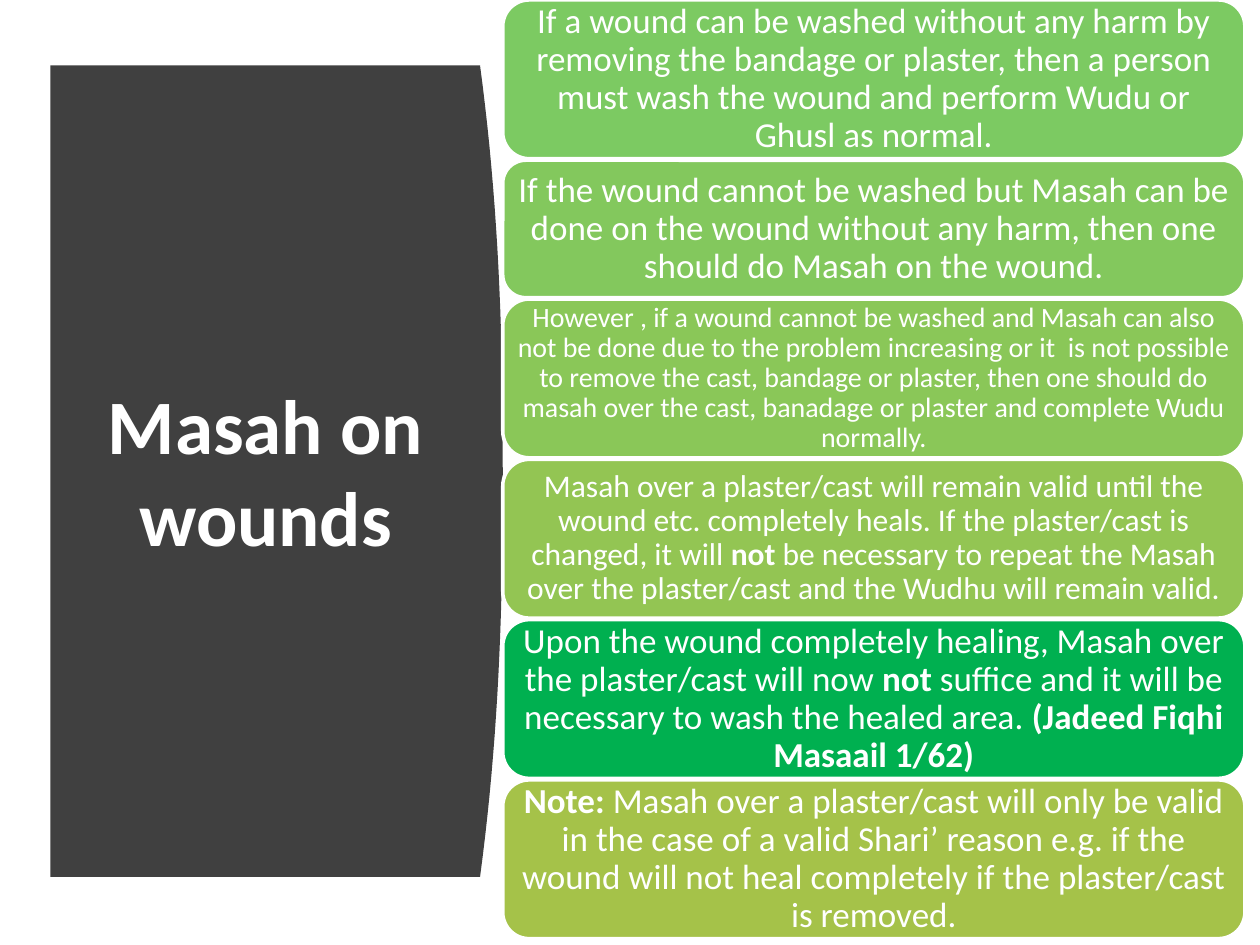
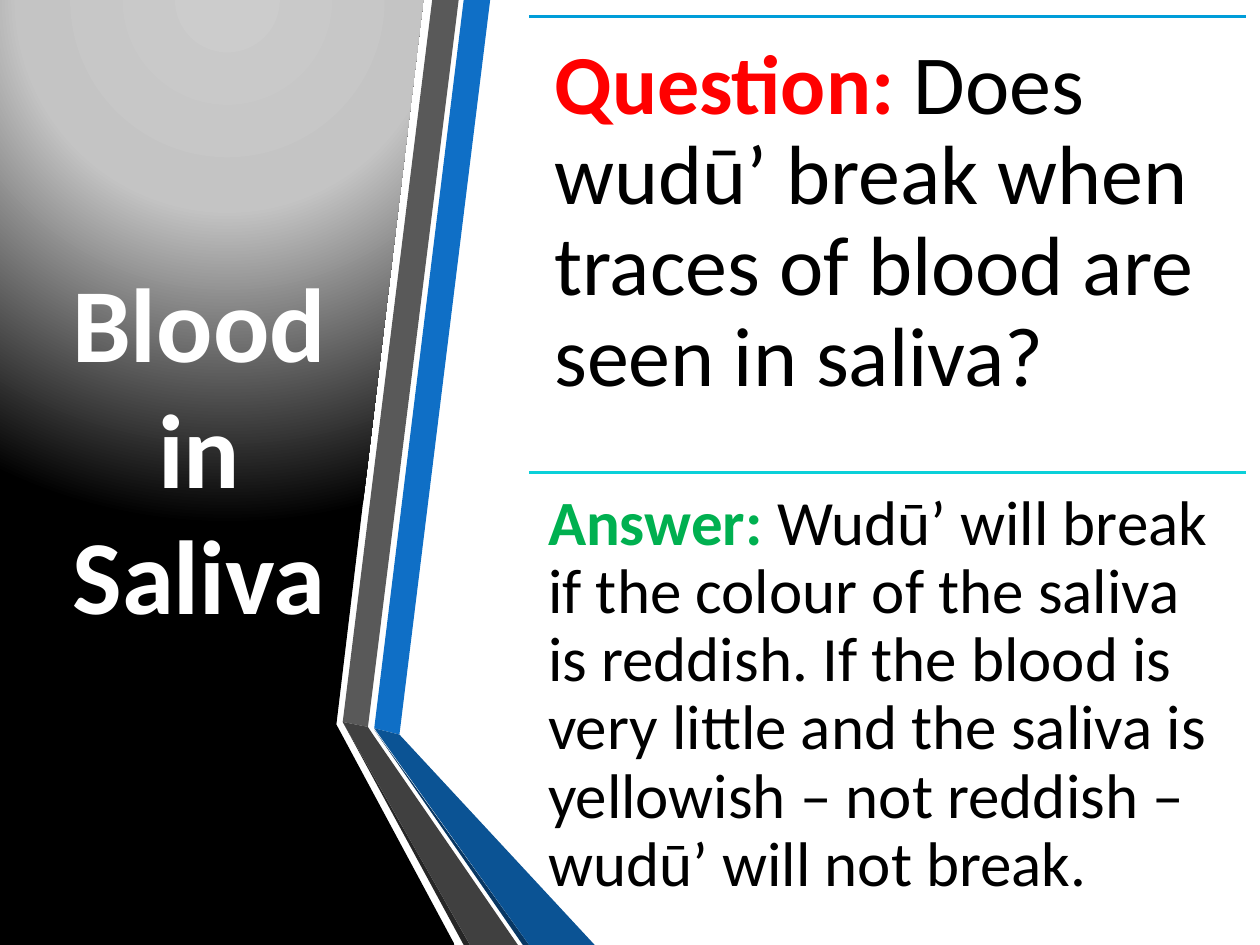
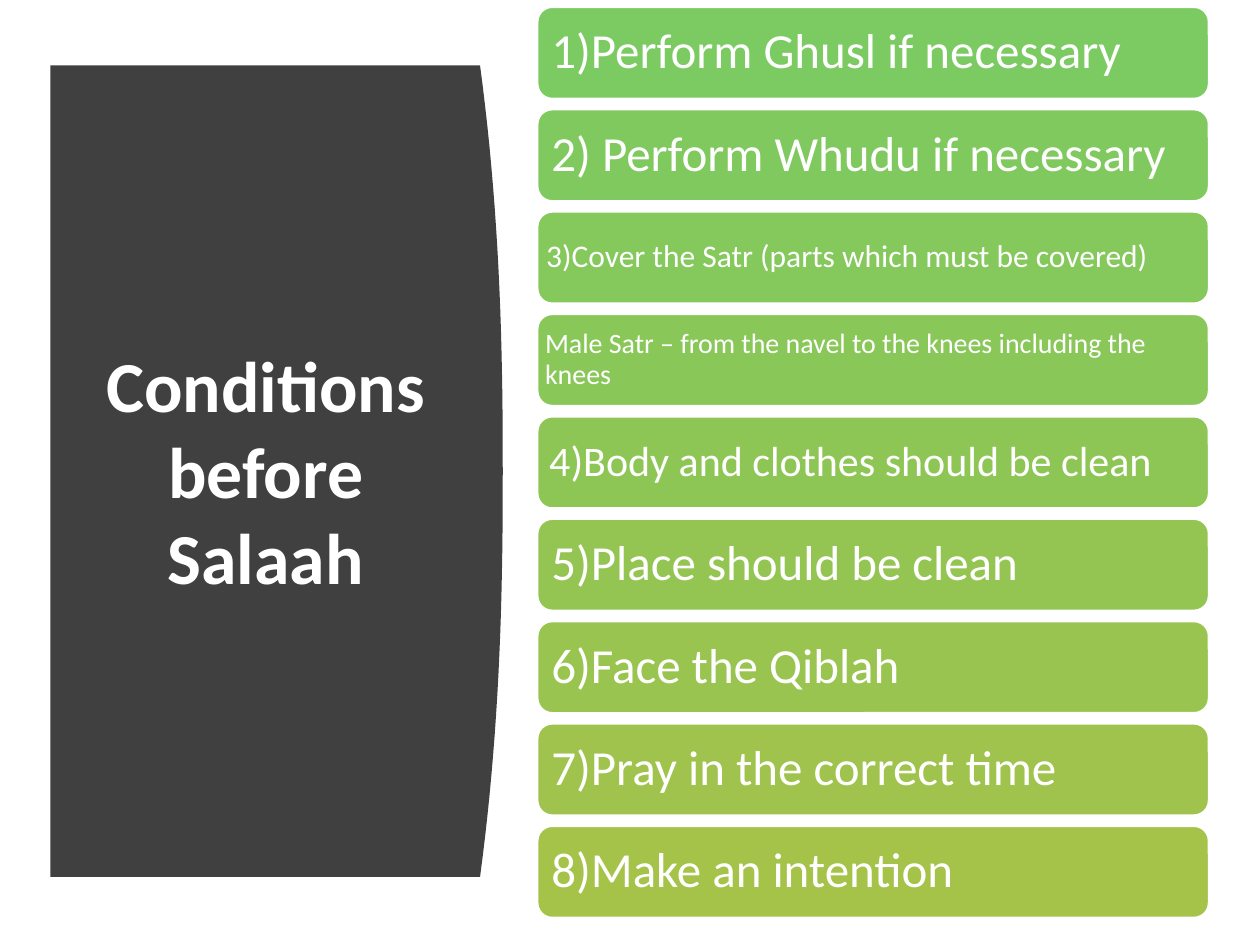
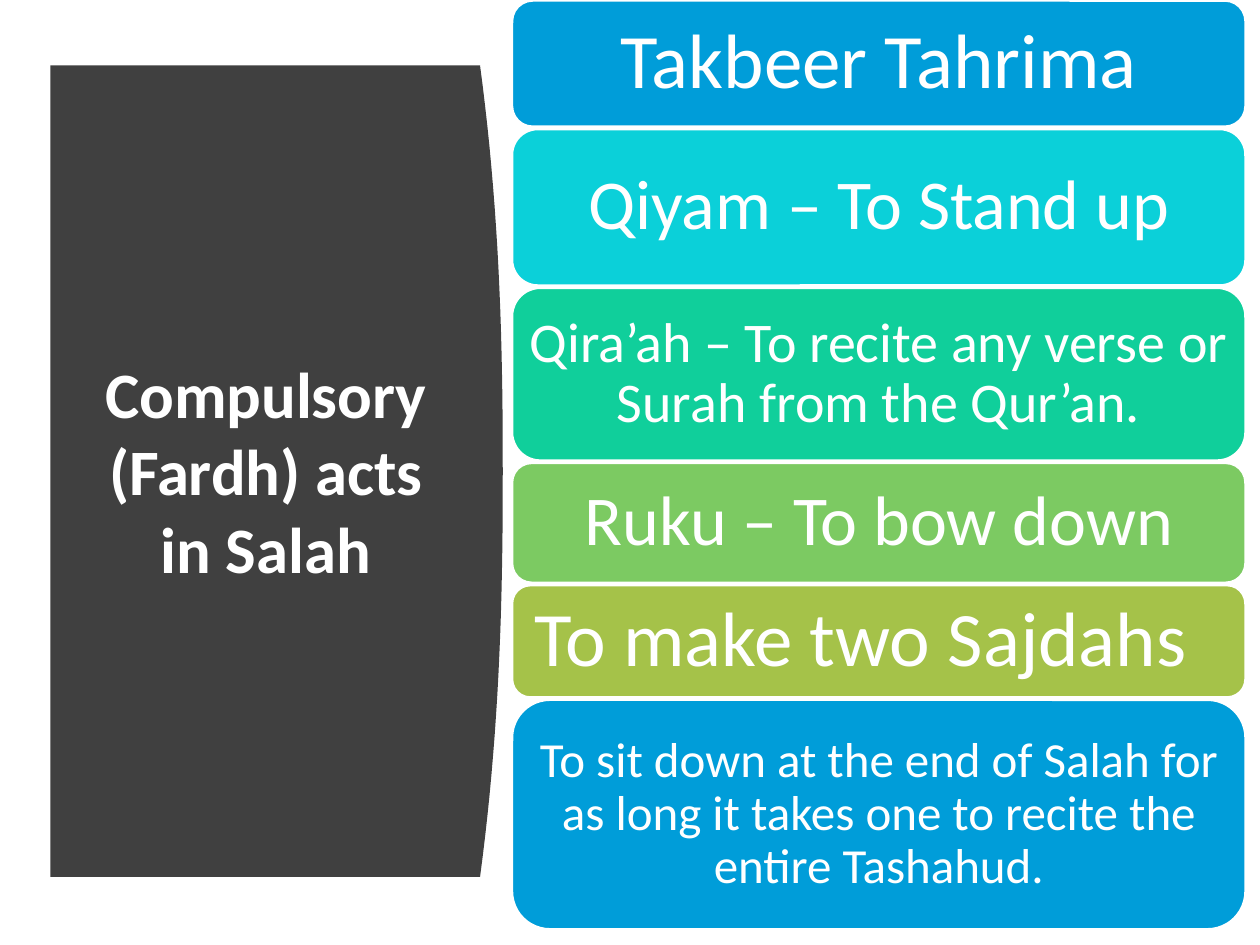
"""Builds four lesson slides on wounds, saliva and the conditions and acts of Salah."""
from dataclasses import dataclass

from lxml import etree
from pptx import Presentation
from pptx import util as u
from pptx.dml.color import RGBColor
from pptx.enum import shapes, text
from pptx.oxml import parse_xml
from pptx.oxml.ns import nsdecls, qn


@dataclass(frozen=True)
class Theme:
    font: str = "Calibri"
    white: str = "FFFFFF"
    black: str = "000000"
    panel: str = "404040"
    red: str = "FF0000"
    green: str = "00B050"
    blue: str = "009DD9"
    cyan: str = "0BD0D9"
    teal: str = "10CF9B"
    leaf: str = "7CCA62"
    olive: str = "A5C249"
    leaf_steps: tuple = ("80C95F", "85C85C", "89C759", "8EC656", "94C552", "99C44F", "9FC34C")
    wound_steps: tuple = ("83C85D", "8AC758", "93C553")
    glow: tuple = ((0, "CCCCCC"), (40, "C4C4C4"), (100, "000000"))
    line: float = 2
    spacing: float = 0.9
    note: int = 16
    small: int = 18
    body: int = 20
    medium: int = 24
    item: int = 28
    large: int = 32
    answer: int = 36
    act: int = 40
    display: int = 44
    question: int = 48
    cover: int = 60
    title_long: int = 37
    title_mid: int = 41


T = Theme()
CENTER, LEFT = text.PP_ALIGN.CENTER, text.PP_ALIGN.LEFT
MIDDLE, TOP = text.MSO_ANCHOR.MIDDLE, text.MSO_ANCHOR.TOP

WOUNDS = [
    ("If a wound can be washed without any harm by removing the bandage or plaster, then a person "
     "must wash the wound and perform Wudu or Ghusl as normal.", T.body, 1.26, T.leaf),
    ("If the wound cannot be washed but Masah can be done on the wound without any harm, then one "
     "should do Masah on the wound.", T.body, 1.09, T.wound_steps[0]),
    ("However , if a wound cannot be washed and Masah can also not be done due to the problem "
     "increasing or it  is not possible to remove the cast, bandage or plaster, then one should do "
     "masah over the cast, banadage or plaster and complete Wudu normally.",
     T.note, 1.26, T.wound_steps[1]),
    ("Masah over a plaster/cast will remain valid until the wound etc. completely heals. If the "
     "plaster/cast is changed, it will **not** be necessary to repeat the Masah over the "
     "plaster/cast and the Wudhu will remain valid.", T.small, 1.26, T.wound_steps[2]),
    ("Upon the wound completely healing, Masah over the plaster/cast will now **not** suffice and "
     "it will be necessary to wash the healed area. **(Jadeed Fiqhi Masaail 1/62)**",
     T.body, 1.26, T.green),
    ("**Note: **Masah over a plaster/cast will only be valid in the case of a valid Shari’ reason "
     "e.g. if the wound will not heal completely if the plaster/cast is removed.",
     T.body, 1.26, T.olive),
]

CONDITIONS = [
    ("1)Perform Ghusl if necessary", T.item),
    ("2) Perform Whudu if necessary", T.item),
    ("3)Cover the Satr (parts which must be covered)", T.small),
    ("Male Satr – from the navel to the knees including the knees", T.note),
    ("4)Body and clothes should be clean", T.medium),
    ("5)Place should be clean", T.item),
    ("6)Face the Qiblah", T.item),
    ("7)Pray in the correct time", T.item),
    ("8)Make an intention", T.item),
]
CONDITION_CARDS = [(words, size, 0.74, fill) for (words, size), fill
                   in zip(CONDITIONS, (T.leaf, *T.leaf_steps, T.olive))]

ACTS = [
    ("Takbeer Tahrima", T.display, 1.01, T.blue),
    ("Qiyam – To Stand up", T.act, 1.25, T.cyan),
    ("Qira’ah – To recite any verse or Surah from the Qur’an.", T.large, 1.38, T.teal),
    ("Ruku – To bow down", T.act, 0.96, T.leaf),
    ("To make two Sajdahs", T.display, 0.9, T.olive, LEFT),
    ("To sit down at the end of Salah for as long it takes one to recite the entire Tashahud.",
     T.item, 1.83, T.blue),
]

CARD_SLIDES = {
    "wounds": dict(title="Masah on wounds", size=T.display, cards=WOUNDS,
                   left=3.99, width=5.89, top=0, bottom=7.45, align=CENTER),
    "conditions": dict(title="Conditions before Salaah", size=T.title_mid, cards=CONDITION_CARDS,
                       left=4.26, width=5.34, top=0.05, bottom=7.29, align=LEFT),
    "acts": dict(title="Compulsory (Fardh) acts in Salah", size=T.title_long, cards=ACTS,
                 left=4.06, width=5.83, top=0, bottom=7.38, align=CENTER),
}

SALIVA = [
    ("**Question: **Does wudū’ break when traces of blood are seen in saliva?",
     T.question, T.red, T.blue),
    ("**Answer: **Wudū’ will break if the colour of the saliva is reddish. If the blood is very "
     "little and the saliva is yellowish – not reddish – wudū’ will not break.",
     T.answer, T.green, T.cyan),
]
BACKDROP = [(0, 0), (3.36, 0), (2.67, 5.75), (3.61, 7.5), (0, 7.5)]
RIBBONS = [
    ("0F6FC6", [(2.97, 5.78), (3.17, 5.83), (3.89, 0), (3.68, 0)]),
    ("595959", [(3.64, 0), (3.43, 0), (2.72, 5.73), (2.92, 5.77)]),
    ("262626", [(2.72, 5.73), (3.68, 7.5), (3.73, 7.5)]),
    ("083763", [(2.97, 5.79), (4.15, 7.5), (4.2, 7.5)]),
    ("0B5394", [(2.97, 5.78), (4.2, 7.5), (4.72, 7.5), (3.17, 5.83)]),
    ("404040", [(4.11, 7.5), (2.96, 5.83), (2.92, 5.77), (2.72, 5.73), (3.73, 7.5)]),
]


def rgb(value):
    return RGBColor.from_string(value)


def write(tf, words, *, size, color=T.white, strong=None, bold=False, align=LEFT,
          anchor=MIDDLE, inset=None, spacing=None):
    tf.word_wrap = True
    tf.auto_size = text.MSO_AUTO_SIZE.NONE
    tf.vertical_anchor = anchor
    if inset is not None:
        tf.margin_left = tf.margin_right = tf.margin_top = tf.margin_bottom = u.Inches(inset)
    p = tf.paragraphs[0]
    p.alignment = align
    if spacing:
        p.line_spacing = spacing
    for i, part in enumerate(words.split("**")):
        if part:
            marked = i % 2 == 1
            r = p.add_run()
            r.text = part
            r.font.name, r.font.size = T.font, u.Pt(size)
            r.font.bold = bold or marked
            r.font.color.rgb = rgb(strong if marked and strong else color)


def outline(s, points, fill):
    emu = [(u.Inches(x), u.Inches(y)) for x, y in points]
    builder = s.shapes.build_freeform(*emu[0], scale=1.0)
    builder.add_line_segments(emu[1:], close=True)
    sp = builder.convert_to_shape()
    sp.shadow.inherit = False
    sp.fill.solid()
    sp.fill.fore_color.rgb = rgb(fill)
    sp.line.fill.background()
    return sp


def glow(sp):
    stops = "".join(f'<a:gs pos="{pos * 1000}"><a:srgbClr val="{color}"/></a:gs>'
                    for pos, color in T.glow)
    grad = parse_xml(f'<a:gradFill {nsdecls("a")} rotWithShape="1"><a:gsLst>{stops}</a:gsLst>'
                     '<a:path path="circle"><a:fillToRect l="50000" t="-80000" r="50000" '
                     'b="180000"/></a:path></a:gradFill>')
    props = sp.element.spPr
    props.replace(props.find(qn("a:solidFill")), grad)


def add_title(s, words, size, box):
    sp = s.shapes.title
    sp.element.getparent().append(sp.element)
    sp.left, sp.top, sp.width, sp.height = map(u.Inches, box)
    write(sp.text_frame, words, size=size, bold=True, align=CENTER)


def add_panel(s, left=0.4, top=0.52, bottom=6.96, edge=3.81, bulge=0.18, steps=40):
    middle, half = (top + bottom) / 2, (bottom - top) / 2
    ys = [top + (bottom - top) * i / steps for i in range(steps + 1)]
    curve = [(edge + bulge * (1 - min(1, abs(y - middle) / half) ** 2.4), y) for y in ys]
    outline(s, [(left, top), *curve, (left, bottom)], T.panel)


def add_card(s, words, size, box, fill, align):
    sp = s.shapes.add_shape(shapes.MSO_SHAPE.ROUNDED_RECTANGLE, *map(u.Inches, box))
    sp.shadow.inherit = False
    sp.fill.solid()
    sp.fill.fore_color.rgb = rgb(fill)
    sp.line.color.rgb = rgb(T.white)
    sp.line.width = u.Pt(T.line)
    corner = box[3] * 0.1667 * 0.293
    write(sp.text_frame, words, size=size, align=align, inset=size / 240 - corner,
          spacing=T.spacing)


def card_slide(s, title, size, cards, left, width, top, bottom, align):
    add_panel(s)
    add_title(s, title, size, (0.71, 1.11, 2.8, 5.24))
    gap = (bottom - top - sum(card[2] for card in cards)) / (len(cards) - 1)
    for words, points, height, fill, *own in cards:
        add_card(s, words, points, (left, top, width, height), fill, own[0] if own else align)
        top += height + gap


def add_rule(s, left, top, width, color):
    ends = map(u.Inches, (left, top, left + width, top))
    line = s.shapes.add_connector(shapes.MSO_CONNECTOR.STRAIGHT, *ends)
    line.line.color.rgb = rgb(color)
    line.line.width = u.Pt(T.line)
    etree.SubElement(line.element.spPr, qn("a:effectLst"))


def saliva_slide(s, left=4.2, top=0.13, width=5.69, height=3.62):
    glow(outline(s, BACKDROP, T.black))
    for fill, points in RIBBONS:
        outline(s, points, fill)
    add_title(s, "Blood in Saliva", T.cover, (0.44, 0.75, 2.28, 5.58))
    for i, (words, size, strong, color) in enumerate(SALIVA):
        y = top + i * height
        add_rule(s, left, y, width, color)
        box = s.shapes.add_textbox(*map(u.Inches, (left, y, width, height)))
        write(box.text_frame, words, size=size, color=T.black, strong=strong, anchor=TOP,
              inset=size / 240, spacing=T.spacing)


def main():
    prs = Presentation()
    prs.slide_width, prs.slide_height = u.Inches(10), u.Inches(7.5)
    for name in ("wounds", "saliva", "conditions", "acts"):
        s = prs.slides.add_slide(prs.slide_layouts[5])
        if name == "saliva":
            saliva_slide(s)
        else:
            card_slide(s, **CARD_SLIDES[name])
    prs.save("out.pptx")


if __name__ == "__main__":
    main()
